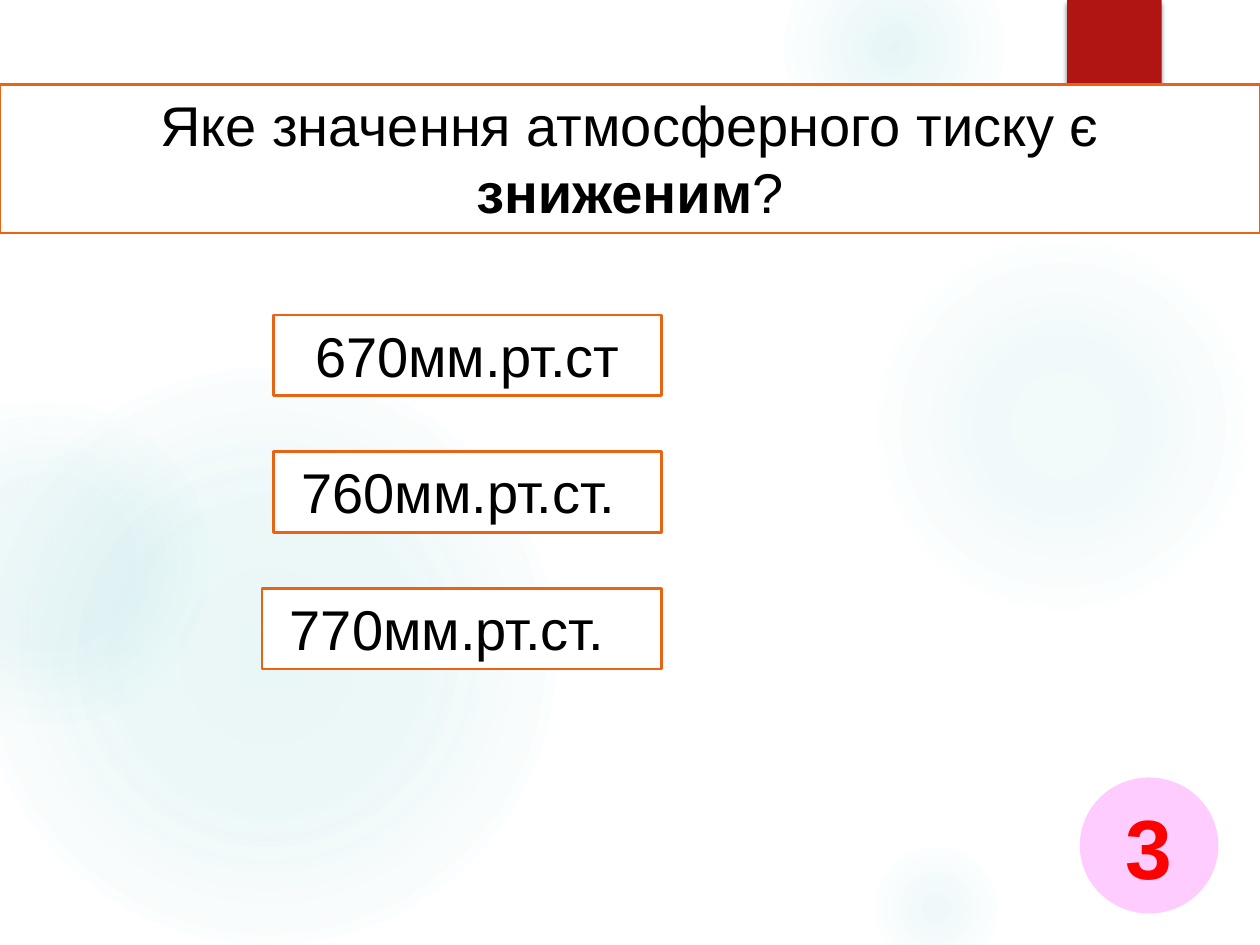
from dataclasses import dataclass

from lxml import etree
from pptx import Presentation
from pptx import util as u
from pptx.dml import color
from pptx.enum import shapes, text
from pptx.oxml import ns


@dataclass(frozen=True)
class Theme:
    """Colours, type sizes and font of the slide."""
    paper: str = "FFFFFF"
    ink: str = "000000"
    border: str = "EA6312"
    ribbon: str = "B01513"
    glow: str = "4CB9C3"
    badge: str = "FFCCFF"
    number: str = "FF0000"
    font: str = "Arial"
    body_size: int = 32
    number_size: int = 48


THEME = Theme()
GLOWS = [
    ((6.89, 1.83, 3.08), ((0, 7), (36, 6), (69, 0), (100, 0))),
    ((6.22, -0.5, 1.75), ((0, 14), (36, 7), (73, 0), (100, 0))),
    ((6.89, 6.67, 1.08), ((0, 9), (36, 5), (66, 0), (100, 0))),
    ((-0.17, 2.92, 4.58), ((0, 11), (36, 10), (75, 0), (100, 0))),
    ((-0.92, 3.17, 2.58), ((0, 8), (36, 8), (72, 0), (100, 0))),
]
ANSWERS = [
    ("670мм.рт.ст", 0, {"align": text.PP_ALIGN.CENTER}),
    ("760мм.рт.ст.", 0, {"indent": 0.12}),
    ("770мм.рт.ст.", 0.09, {"indent": 0.12}),
]


def add_child(parent, tag, **attributes):
    """Append a DrawingML element with the given attributes."""
    child = etree.SubElement(parent, ns.qn(f"a:{tag}"))
    for name, value in attributes.items():
        child.set(name, str(value))
    return child


def add_colour(parent, value, percent):
    """Append an RGB colour with an opacity in percent."""
    add_child(add_child(parent, "srgbClr", val=value), "alpha", val=percent * 1000)


def add_box(slide, kind, box, fill=None, line=None):
    """Add a flat preset shape in a box given in inches."""
    shape = slide.shapes.add_shape(kind, *map(u.Inches, box))
    shape.shadow.inherit = False
    if fill:
        shape.fill.solid()
        shape.fill.fore_color.rgb = color.RGBColor.from_string(fill)
    else:
        shape.fill.background()
    if line:
        shape.line.color.rgb = color.RGBColor.from_string(line)
        shape.line.width = u.Pt(1.5)
    else:
        shape.line.fill.background()
    return shape


def write_text(shape, runs, size=THEME.body_size, ink=THEME.ink, indent=0,
               align=text.PP_ALIGN.LEFT, anchor=text.MSO_ANCHOR.TOP):
    """Fill a shape with one paragraph of (words, bold) runs."""
    frame = shape.text_frame
    frame.word_wrap = True
    frame.vertical_anchor = anchor
    frame.margin_left = u.Inches(0.1 + indent)
    paragraph = frame.paragraphs[0]
    paragraph.alignment = align
    for words, bold in runs:
        run = paragraph.add_run()
        run.text = words
        run.font.name = THEME.font
        run.font.size = u.Pt(size)
        run.font.bold = bold
        run.font.color.rgb = color.RGBColor.from_string(ink)


def add_glow(slide, box, stops):
    """Add a soft circle whose opacity fades along the stops."""
    shape = add_box(slide, shapes.MSO_SHAPE.OVAL, box)
    properties = shape.element.spPr
    gradient = etree.Element(ns.qn("a:gradFill"), rotWithShape="1")
    stop_list = add_child(gradient, "gsLst")
    for position, opacity in stops:
        add_colour(add_child(stop_list, "gs", pos=position * 1000), THEME.glow, opacity)
    circle = add_child(gradient, "path", path="circle")
    add_child(circle, "fillToRect", l=50000, t=50000, r=50000, b=50000)
    properties.replace(properties.find(ns.qn("a:noFill")), gradient)


def add_ribbon(slide, box):
    """Add the red tab with its soft shadow at the top edge."""
    shape = add_box(slide, shapes.MSO_SHAPE.RECTANGLE, box, THEME.ribbon)
    effects = shape.element.spPr.find(ns.qn("a:effectLst"))
    shadow = add_child(effects, "outerShdw", blurRad=u.Pt(3), dist=u.Pt(2),
                       dir=90 * 60000, algn="ctr", rotWithShape=0)
    add_colour(shadow, THEME.ink, 45)


def add_question(slide, box):
    """Add the question banner."""
    shape = add_box(slide, shapes.MSO_SHAPE.RECTANGLE, box, THEME.paper, THEME.border)
    runs = [("Яке значення атмосферного тиску є ", False), ("зниженим", True), ("?", False)]
    write_text(shape, runs, align=text.PP_ALIGN.CENTER)


def add_number(slide, box):
    """Add the round badge with the question number."""
    shape = add_box(slide, shapes.MSO_SHAPE.OVAL, box, THEME.badge)
    write_text(shape, [("3", True)], size=THEME.number_size, ink=THEME.number,
               align=text.PP_ALIGN.CENTER, anchor=text.MSO_ANCHOR.MIDDLE)


def add_answers(slide, box):
    """Add the answer boxes, spaced evenly down the given box."""
    left, top, width, height = box
    row_height = 0.64
    step = (height - row_height) / (len(ANSWERS) - 1)
    for row, (words, outdent, style) in enumerate(ANSWERS):
        row_box = (left - outdent, top + row * step, width + outdent, row_height)
        shape = add_box(slide, shapes.MSO_SHAPE.RECTANGLE, row_box, THEME.paper, THEME.border)
        write_text(shape, [(words, False)], **style)


def main():
    """Build and save the quiz slide."""
    presentation = Presentation()
    presentation.slide_width = u.Inches(10)
    presentation.slide_height = u.Inches(7.5)
    slide = presentation.slides.add_slide(presentation.slide_layouts[6])
    for (left, top, size), stops in GLOWS:
        add_glow(slide, (left, top, size, size), stops)
    add_ribbon(slide, (8.47, 0, 0.75, 1.2))
    add_question(slide, (0, 0.67, 10, 1.18))
    add_number(slide, (8.57, 6.17, 1.1, 1.08))
    add_answers(slide, (2.17, 2.5, 3.08, 2.81))
    presentation.save("out.pptx")


if __name__ == "__main__":
    main()
